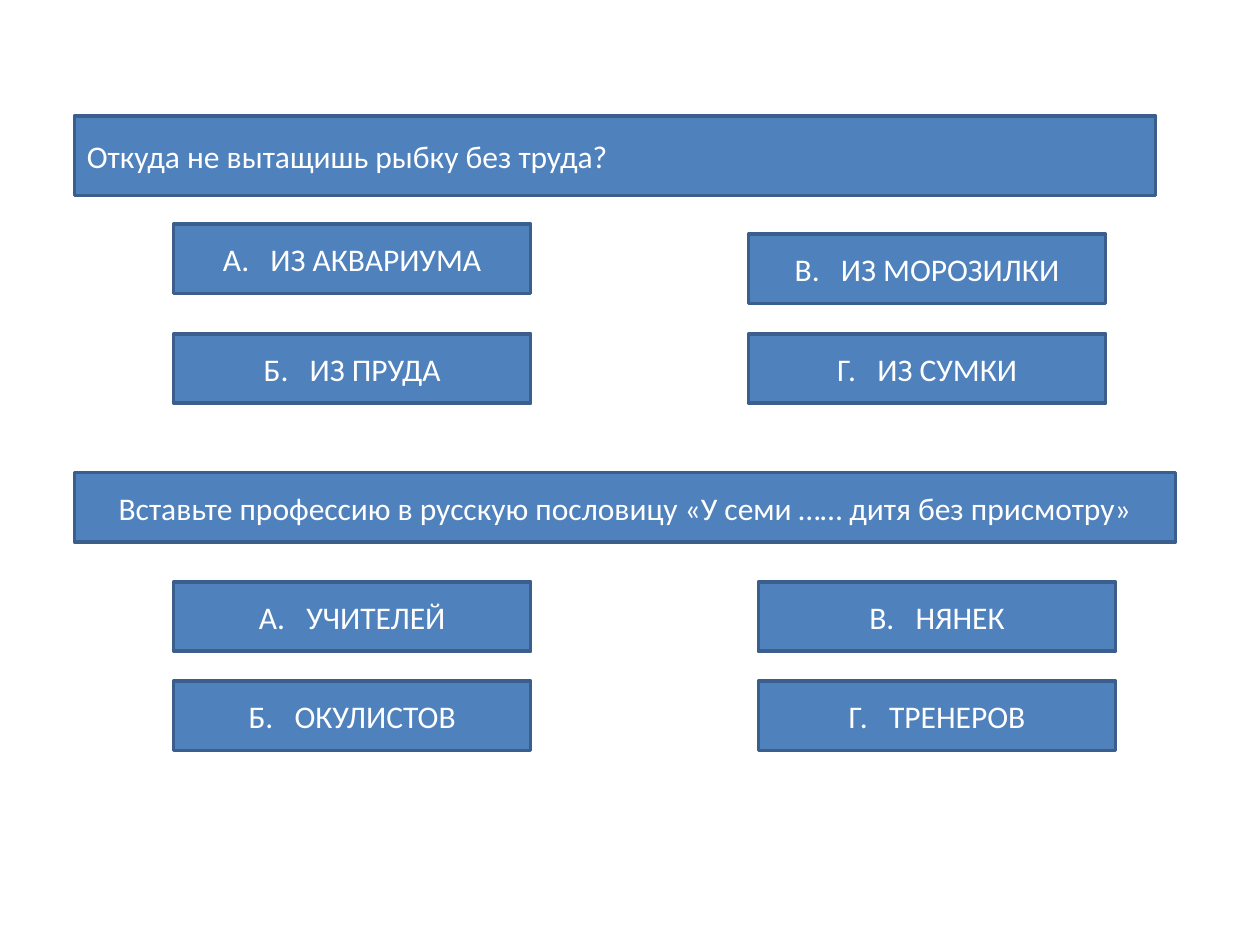
from pptx import Presentation
from pptx import util as u
from pptx.dml.color import RGBColor
from pptx.enum import shapes, text

BLUE = RGBColor(0x4F, 0x81, 0xBD)
EDGE = RGBColor(0x3A, 0x5F, 0x8C)
WHITE = RGBColor(0xFF, 0xFF, 0xFF)

LEFT = 3.5
ASKS = [
    ("Откуда не вытащишь рыбку без труда?", 2.34, 21.8, 1.6, text.PP_ALIGN.LEFT),
    ("Вставьте профессию в русскую пословицу «У семи …… дитя без присмотру»",
     9.53, 22.2, 1.4, text.PP_ALIGN.CENTER),
]
PICKS = [
    ("А.", "ИЗ АКВАРИУМА", LEFT, 4.52),
    ("Б.", "ИЗ ПРУДА", LEFT, 6.73),
    ("В.", "ИЗ МОРОЗИЛКИ", 15.09, 4.72),
    ("Г.", "ИЗ СУМКИ", 15.09, 6.73),
    ("А.", "УЧИТЕЛЕЙ", LEFT, 11.73),
    ("Б.", "ОКУЛИСТОВ", LEFT, 13.73),
    ("В.", "НЯНЕК", 15.29, 11.73),
    ("Г.", "ТРЕНЕРОВ", 15.29, 13.73),
]


def add_box(slide, x, y, w, h, align):
    box = slide.shapes.add_shape(
        shapes.MSO_SHAPE.RECTANGLE, u.Cm(x), u.Cm(y), u.Cm(w), u.Cm(h))
    box.shadow.inherit = False
    box.fill.solid()
    box.fill.fore_color.rgb = BLUE
    box.line.color.rgb = EDGE
    box.line.width = u.Pt(2)
    frame = box.text_frame
    frame.word_wrap = True
    frame.vertical_anchor = text.MSO_ANCHOR.MIDDLE
    para = frame.paragraphs[0]
    para.alignment = align
    para.font.name = "Calibri"
    para.font.size = u.Pt(18)
    para.font.color.rgb = WHITE
    return para


def add_ask(slide, words, y, w, h, align):
    add_box(slide, 1.5, y, w, h, align).add_run().text = words


def add_pick(slide, mark, words, x, y):
    para = add_box(slide, x, y, 7.2, 1.4, text.PP_ALIGN.CENTER)
    para.add_run().text = mark
    gap = para.add_run()
    gap.text = " "
    gap._r.get_or_add_rPr().set("spc", "800")
    para.add_run().text = words


def main():
    deck = Presentation()
    deck.slide_width = u.Cm(25.4)
    deck.slide_height = u.Cm(19.05)
    slide = deck.slides.add_slide(deck.slide_layouts[6])
    for ask in ASKS:
        add_ask(slide, *ask)
    for pick in PICKS:
        add_pick(slide, *pick)
    deck.save("out.pptx")


if __name__ == "__main__":
    main()
